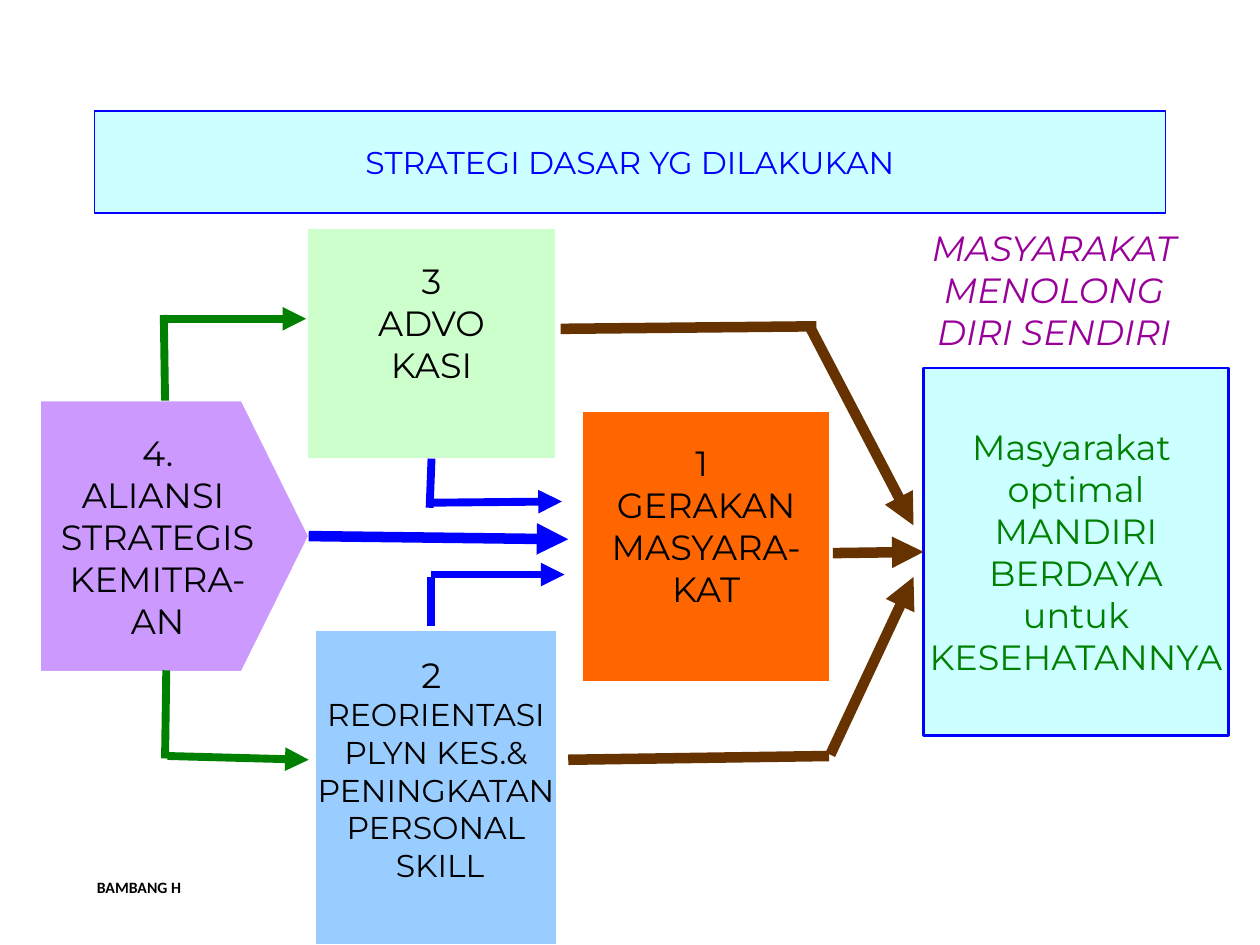
import pptx
import pptx.util
import pptx.dml.color
import pptx.enum.shapes
import pptx.enum.text
import pptx.oxml.ns
import lxml.etree

RGBColor = pptx.dml.color.RGBColor
Shapes = pptx.enum.shapes.MSO_SHAPE

BLACK = RGBColor(0x00, 0x00, 0x00)
WHITE = RGBColor(0xFF, 0xFF, 0xFF)
BLUE = RGBColor(0x00, 0x00, 0xFF)
GREEN = RGBColor(0x00, 0x80, 0x00)
BROWN = RGBColor(0x66, 0x33, 0x00)
MAGENTA = RGBColor(0x99, 0x00, 0x99)
CYAN = RGBColor(0xCC, 0xFF, 0xFF)
ORANGE = RGBColor(0xFF, 0x66, 0x00)
MINT = RGBColor(0xCC, 0xFF, 0xCC)
SKY = RGBColor(0x99, 0xCC, 0xFF)
VIOLET = RGBColor(0xCC, 0x99, 0xFF)

COLUMNS, ROWS = 100, 75
CELL = pptx.util.Inches(0.1)

PLAIN_LINES = [
    (GREEN, 4.5, (13.1, 31.8), (13, 25)),
    (GREEN, 4.5, (13.1, 60.2), (13.2, 53.2)),
    (BROWN, 6, (44.5, 26.1), (64.8, 25.9)),
    (BROWN, 6, (45.1, 60.3), (65.8, 60)),
    (BLUE, 4.5, (34.2, 49.7), (34.2, 45.8)),
]
ARROWS = [
    (GREEN, 4.5, (13.3, 25.3), (24.3, 25.3)),
    (GREEN, 4.5, (13.3, 60), (24.5, 60.3)),
    (BROWN, 6, (64.2, 25.8), (72.5, 41.7)),
    (BROWN, 6, (65.9, 59.9), (72.5, 45.8)),
    (BLUE, 4.5, (34.2, 45.6), (44.8, 45.6)),
    (BLUE, 4.5, (34.1, 39.9), (44.6, 39.8)),
]


def grid(*cells):
    return [round(cell * CELL) for cell in cells]


def write_text(shape, lines, size=20, first_size=None, color=BLACK, font="Montserrat",
               bold=False, italic=False, align=pptx.enum.text.PP_ALIGN.CENTER,
               anchor=pptx.enum.text.MSO_ANCHOR.MIDDLE, wrap=False, bottom=0.05):
    frame = shape.text_frame
    frame.word_wrap = wrap
    frame.vertical_anchor = anchor
    frame.margin_bottom = pptx.util.Inches(bottom)
    for index, line in enumerate(lines):
        paragraph = frame.paragraphs[0] if index == 0 else frame.add_paragraph()
        paragraph.alignment = align
        run = paragraph.add_run()
        run.text = line
        run.font.size = pptx.util.Pt(first_size if first_size and index == 0 else size)
        run.font.name = font
        run.font.bold = bold
        run.font.italic = italic
        run.font.color.rgb = color


def paint(shape, fill, line, width):
    shape.fill.solid()
    shape.fill.fore_color.rgb = fill
    shape.line.color.rgb = line
    shape.line.width = pptx.util.Pt(width)


def add_title(slide, text):
    title = slide.shapes.title
    title.left, title.top, title.width, title.height = grid(7.5, 8.8, 85, 8.1)
    paint(title, CYAN, BLUE, 0.75)
    write_text(title, [text], size=18, color=BLUE, wrap=True)


def add_box(slide, cells, lines, fill, line=WHITE, width=0.75, kind=Shapes.RECTANGLE, **text_format):
    box = slide.shapes.add_shape(kind, *grid(*cells))
    box.shadow.inherit = False
    paint(box, fill, line, width)
    write_text(box, lines, **text_format)
    return box


def add_label(slide, cells, lines, **text_format):
    label = slide.shapes.add_textbox(*grid(*cells))
    write_text(label, lines, anchor=pptx.enum.text.MSO_ANCHOR.TOP, **text_format)


def add_line(slide, color, width, start, end, arrow=False):
    connector = slide.shapes.add_connector(
        pptx.enum.shapes.MSO_CONNECTOR.STRAIGHT, *grid(*start, *end))
    connector.line.color.rgb = color
    connector.line.width = pptx.util.Pt(width)
    qn = pptx.oxml.ns.qn
    properties = connector.line._get_or_add_ln()
    if arrow:
        lxml.etree.SubElement(properties, qn("a:tailEnd"), type="triangle")
    lxml.etree.SubElement(properties.getparent(), qn("a:effectLst"))
    return connector


def main():
    presentation = pptx.Presentation()
    presentation.slide_width, presentation.slide_height = grid(COLUMNS, ROWS)
    slide = presentation.slides.add_slide(presentation.slide_layouts[5])

    add_title(slide, "STRATEGI DASAR YG DILAKUKAN")
    add_label(slide, (6.7, 69.2, 9.8, 2.5), ["BAMBANG H"], size=9, font="Calibri",
              bold=True, align=pptx.enum.text.PP_ALIGN.LEFT)
    add_box(slide, (46.2, 32.6, 19.7, 21.6), ["1 ", "GERAKAN", "MASYARA-", "KAT"],
            ORANGE, width=1.5, bottom=0.38)
    advocacy = add_box(slide, (24.4, 18.1, 19.7, 18.3), ["3", "ADVO", "KASI"],
                       MINT, bottom=0.38)
    add_box(slide, (25, 50, 19.2, 25),
            ["2 ", "REORIENTASI", "PLYN KES.&", "PENINGKATAN", "PERSONAL", " SKILL"],
            SKY, size=18, first_size=20, bottom=0.35)
    alliance = add_box(slide, (3.2, 31.8, 21.3, 21.5),
                       ["4.", "ALIANSI ", "STRATEGIS", "KEMITRA-", "AN"],
                       VIOLET, kind=Shapes.PENTAGON)
    alliance.adjustments[0] = 0.25

    for line in PLAIN_LINES:
        add_line(slide, *line)
    for line in ARROWS:
        add_line(slide, *line, arrow=True)
    alliance_arrow = add_line(slide, BLUE, 6, (24.4, 42.3), (45.1, 42.8), arrow=True)
    alliance_arrow.begin_connect(alliance, 3)
    advocacy_line = add_line(slide, BLUE, 4.5, (34.1, 36.6), (34.1, 40.3))
    advocacy_line.begin_connect(advocacy, 2)

    community = add_box(slide, (73.3, 29.2, 24.2, 29.2),
                        ["Masyarakat ", "optimal", "MANDIRI", "BERDAYA", "untuk", "KESEHATANNYA"],
                        CYAN, line=BLUE, width=1.5, color=GREEN)
    movement_arrow = add_line(slide, BROWN, 6, (66.1, 43.9), (73.6, 43.8), arrow=True)
    movement_arrow.end_connect(community, 1)
    add_label(slide, (71.7, 17.5, 23.9, 11), ["MASYARAKAT", "MENOLONG", "DIRI SENDIRI"],
              color=MAGENTA, italic=True)

    presentation.save("out.pptx")


if __name__ == "__main__":
    main()
